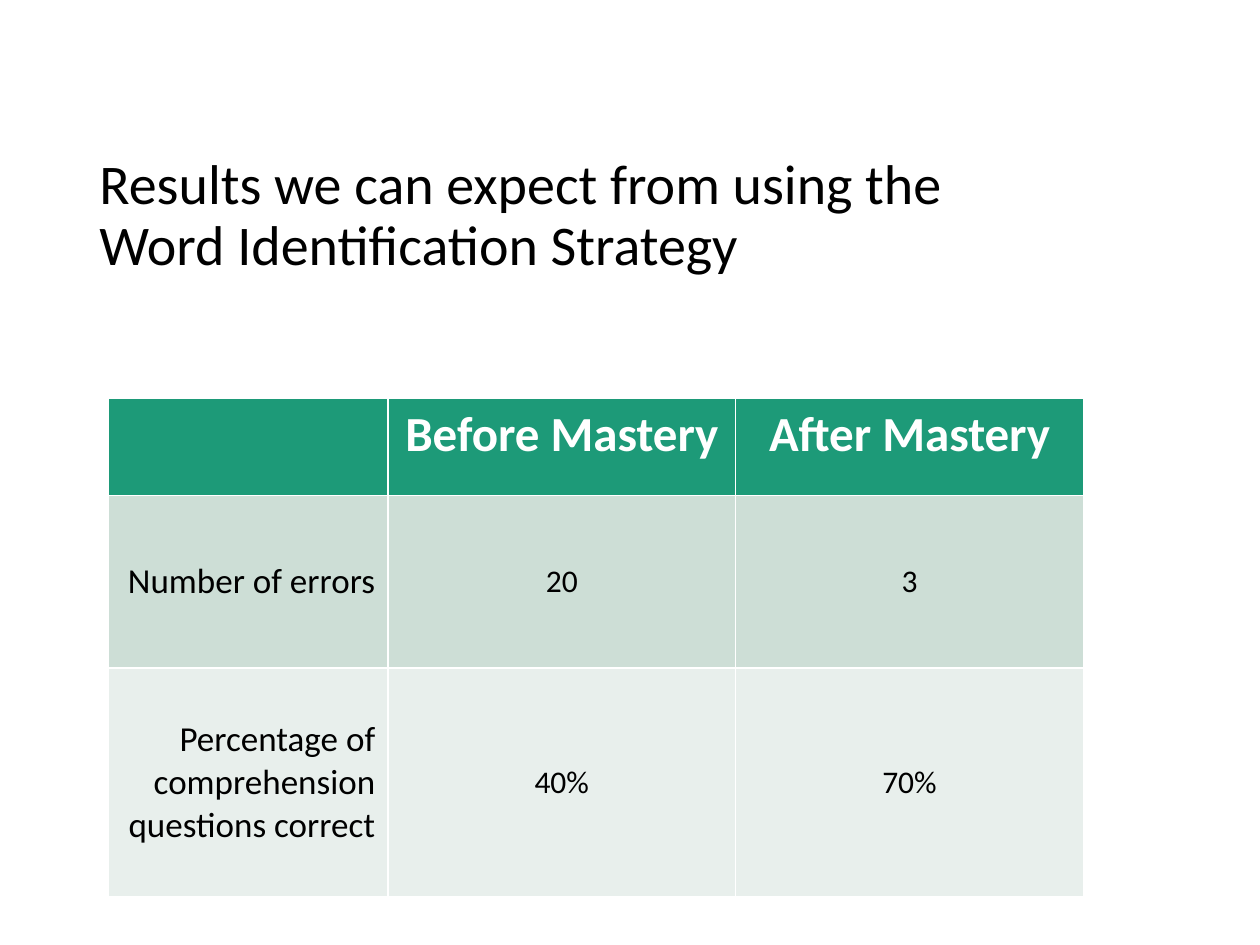
from pptx import Presentation
from pptx.dml.color import RGBColor as RGB
from pptx.enum.text import MSO_ANCHOR as Anchor, PP_ALIGN as Align
from pptx.util import Cm, Pt

BLACK = RGB(0x00, 0x00, 0x00)
WHITE = RGB(0xFF, 0xFF, 0xFF)
GREEN = RGB(0x1D, 0x9A, 0x78)
SAGE = RGB(0xCD, 0xDE, 0xD6)
MIST = RGB(0xE8, 0xEF, 0xEC)

FILLS = (GREEN, SAGE, MIST)
COLS = (5.64, 7.01, 7.01)
ROWS = (1.96, 3.48, 4.6)
DATA = (
    ("", "Before Mastery", "After Mastery"),
    ("Number of errors", "20", "3"),
    ("Percentage of comprehension questions correct", "40%", "70%"),
)


def style(para, size, color, align, bold=False):
    """Set the font and alignment of a paragraph."""
    para.alignment = align
    font = para.font
    font.name, font.size, font.bold = "Calibri", Pt(size), bold
    font.color.rgb = color


def add_title(slide, left, top, width, height):
    """Place and format the title in the given box."""
    title = slide.shapes.title
    title.left, title.top = Cm(left), Cm(top)
    title.width, title.height = Cm(width), Cm(height)
    frame = title.text_frame
    frame.text = "Results we can expect from using the Word Identification Strategy"
    frame.word_wrap = True
    frame.vertical_anchor = Anchor.BOTTOM
    para = frame.paragraphs[0]
    para.line_spacing = 0.9
    style(para, 32, BLACK, Align.LEFT)


def fill_cell(cell, text, row, col):
    """Write one cell, styled by its row and column."""
    cell.fill.solid()
    cell.fill.fore_color.rgb = FILLS[row]
    cell.text = text
    para = cell.text_frame.paragraphs[0]
    if row == 0:
        style(para, 28, WHITE, Align.CENTER, True)
        return
    cell.vertical_anchor = Anchor.MIDDLE
    if col == 0:
        style(para, 20, BLACK, Align.RIGHT)
    else:
        style(para, 18, BLACK, Align.CENTER)


def add_results(slide, left, top):
    """Place the results table with its corner at the given point."""
    frame = slide.shapes.add_table(
        len(ROWS), len(COLS), Cm(left), Cm(top), Cm(sum(COLS)), Cm(sum(ROWS))
    )
    table = frame.table
    for col, width in zip(table.columns, COLS):
        col.width = Cm(width)
    for row, height in zip(table.rows, ROWS):
        row.height = Cm(height)
    for r, line in enumerate(DATA):
        for c, text in enumerate(line):
            fill_cell(table.cell(r, c), text, r, c)


def main():
    """Build and save the slide."""
    deck = Presentation()
    deck.slide_width, deck.slide_height = Cm(25.4), Cm(19.05)
    slide = deck.slides.add_slide(deck.slide_layouts[5])
    add_title(slide, 1.75, 1.27, 19.38, 4.45)
    add_results(slide, 2.18, 8.03)
    deck.save("out.pptx")


if __name__ == "__main__":
    main()
